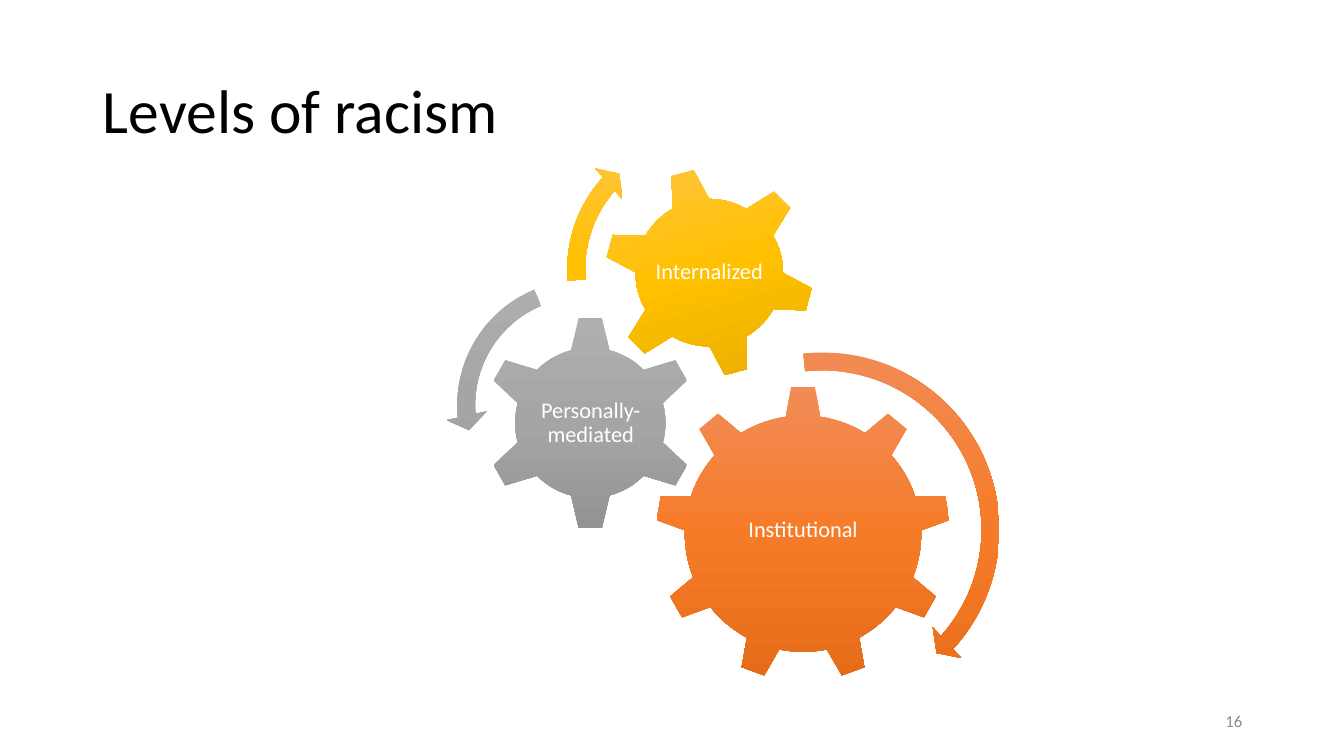
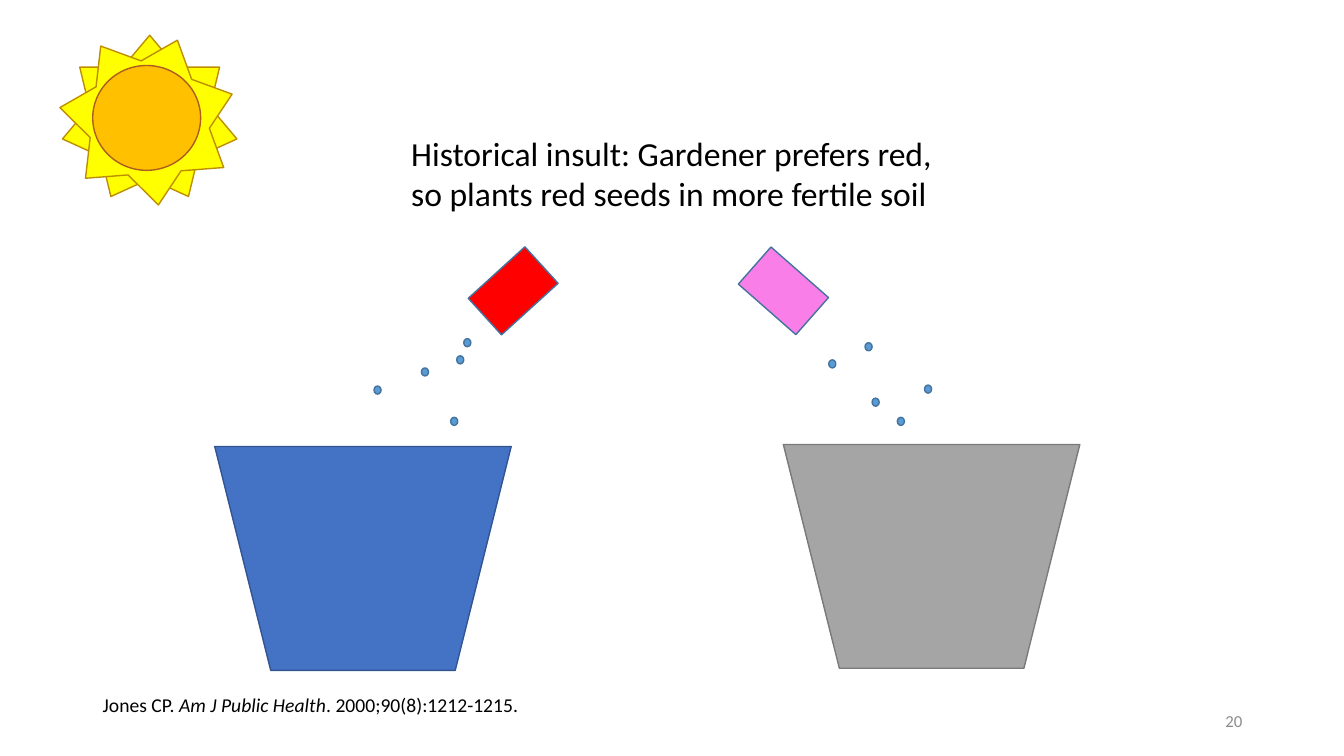
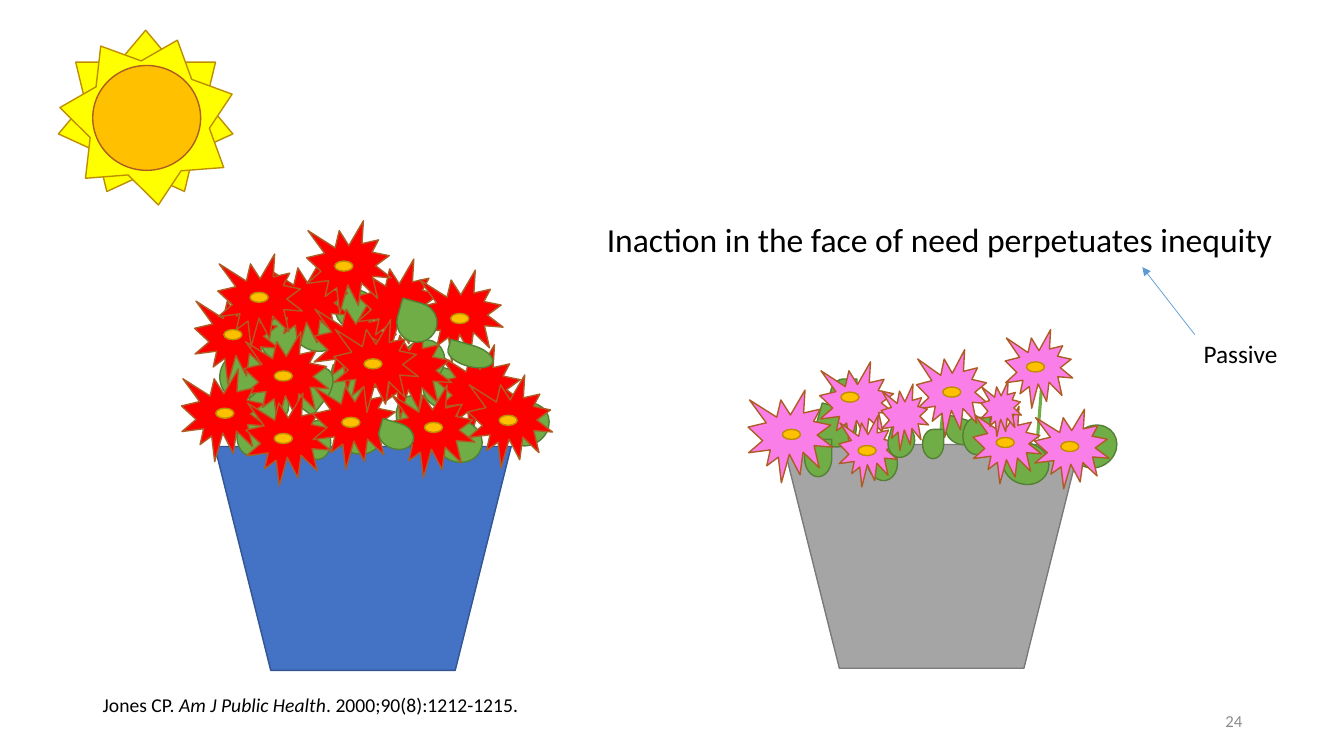
from copy import deepcopy

from pptx import Presentation
from pptx.dml.color import RGBColor
from pptx.enum.shapes import MSO_CONNECTOR, MSO_SHAPE
from pptx.enum.text import MSO_ANCHOR, PP_ALIGN
from pptx.oxml.ns import qn
from pptx.oxml.xmlchemy import OxmlElement
from pptx.util import Inches, Pt

FONT = "Calibri"
BLACK, WHITE, MUTED = "000000", "FFFFFF", "8C8C8C"
RED, PINK = "FF0000", "FA7EE8"
GREEN, GOLD, YELLOW, SKY = "70AD47", "FFC000", "FFFF00", "5B9BD5"
RUST, OCHRE, MOSS, STEEL = "AF5C24", "BD8E00", "538035", "43739E"
ORANGE_FADE = ("F18C57", "F67B28", "E56C19")
GREY_FADE = ("AFAFAF", "A5A5A5", "939393")
GOLD_FADE = ("FFC64B", "FFC000", "E3AB00")

TITLE_ONLY, BLANK = 5, 6
INSETS = (0.1, 0.05, 0.1, 0.05)
TIGHT = (0.02,) * 4


def rgb(code):
    return RGBColor.from_string(code)


def box(at):
    return [Inches(v) for v in at]


def write(frame, lines, size, color=BLACK, align=PP_ALIGN.LEFT,
          anchor=MSO_ANCHOR.TOP, wrap=True, space=1.0, insets=INSETS):
    """Fill a frame; each line is a list of (text, italic) runs."""
    frame.word_wrap = wrap
    frame.vertical_anchor = anchor
    (frame.margin_left, frame.margin_top,
     frame.margin_right, frame.margin_bottom) = box(insets)
    for i, runs in enumerate(lines):
        para = frame.add_paragraph() if i else frame.paragraphs[0]
        para.alignment = align
        para.line_spacing = space
        for text, italic in runs:
            run = para.add_run()
            run.text = text
            font = run.font
            font.name, font.size, font.italic = FONT, Pt(size), italic
            font.color.rgb = rgb(color)


def plain(*texts):
    return [[(text, False)] for text in texts]


def label(slide, at, lines, size, **style):
    write(slide.shapes.add_textbox(*box(at)).text_frame, lines, size, **style)


def draw(slide, kind, at, fill, line, turn=0):
    shape = slide.shapes.add_shape(kind, *box(at))
    shape.shadow.inherit = False
    shape.rotation = turn
    shape.fill.solid()
    shape.fill.fore_color.rgb = rgb(fill)
    shape.line.color.rgb = rgb(line)
    shape.line.width = Pt(1)
    return shape


def draw_fade(slide, kind, at, fade, turn=0, adjust=()):
    """Draw a borderless shape that fades downwards through three colours."""
    shape = slide.shapes.add_shape(kind, *box(at))
    shape.shadow.inherit = False
    shape.rotation = turn
    shape.line.fill.background()
    shape.fill.gradient()
    shape.fill.gradient_angle = 270
    stops = shape._element.spPr.find(".//" + qn("a:gsLst"))
    stops.append(deepcopy(stops[0]))
    for i, stop in enumerate(shape.fill.gradient_stops):
        stop.position = i / 2
        stop.color.rgb = rgb(fade[i])
    for i, value in enumerate(adjust):
        shape.adjustments[i] = value


def link(slide, start, end, color, width, arrow=False):
    line = slide.shapes.add_connector(
        MSO_CONNECTOR.STRAIGHT, *box(start), *box(end))
    line.line.color.rgb = rgb(color)
    line.line.width = Pt(width)
    if arrow:
        tip = OxmlElement("a:tailEnd")
        tip.set("type", "triangle")
        line.line._get_or_add_ln().append(tip)
    line._element.spPr.append(OxmlElement("a:effectLst"))


def number(slide, value):
    label(slide, (9.42, 6.95, 3, 0.4), plain(value), 12, color=MUTED,
          align=PP_ALIGN.RIGHT, anchor=MSO_ANCHOR.MIDDLE)


def cite(slide):
    runs = [("Jones CP. ", False), ("Am J Public Health", True),
            (". 2000;90(8):1212-1215.", False)]
    label(slide, (0.92, 6.83, 4.36, 0.34), [runs], 14, wrap=False)


def sun(slide, left=0.62, top=0.35):
    """Draw the sun; left and top place its rear star."""
    star = MSO_SHAPE.STAR_7_POINT
    draw(slide, star, (left, top, 1.73, 1.6), YELLOW, OCHRE)
    draw(slide, star, (0.62, 0.35, 1.73, 1.6), YELLOW, OCHRE, 20.1)
    draw(slide, MSO_SHAPE.OVAL, (0.92, 0.65, 1.07, 1.04), GOLD, RUST)


def blue_pot(slide):
    draw(slide, MSO_SHAPE.TRAPEZOID, (2.13, 4.43, 2.94, 2.22),
         "4472C4", "325491", 180)


def grey_pot(slide):
    draw(slide, MSO_SHAPE.TRAPEZOID, (7.77, 4.41, 2.94, 2.22),
         "A5A5A5", "7A7A7A", 180)


def leaves(slide, *rows):
    """Draw leaves from rows of left, top, width, height, turn."""
    for *at, turn in rows:
        leaf = draw(slide, MSO_SHAPE.TEAR, at, GREEN, MOSS, turn)
    return leaf


def blooms(slide, color, *rows):
    """Draw petals from rows of left, top and, if not usual, width, height."""
    for left, top, *size in rows:
        at = (left, top, *(size or (0.84, 0.92)))
        draw(slide, MSO_SHAPE.EXPLOSION1, at, color, RUST)


def dots(slide, size, fill, line, *spots):
    for spot in spots:
        draw(slide, MSO_SHAPE.OVAL, spot + size, fill, line)


def eyes(slide, *spots):
    dots(slide, (0.18, 0.1), GOLD, OCHRE, *spots)


def red_plant(slide):
    leaves(slide,
           (4.2, 3.65, 0.39, 0.4, 285.8), (3.25, 3.66, 0.39, 0.4, 285.8),
           (2.47, 3.82, 0.39, 0.4, 285.8), (2.98, 3.12, 0.3, 0.42, 285.8),
           (3.33, 2.87, 0.39, 0.4, 285.8), (2.59, 3.18, 0.39, 0.4, 285.8))
    blooms(slide, RED, (2.63, 2.56), (3.11, 2.97), (4.34, 3.42))
    blue_pot(slide)
    blooms(slide, RED, (3.54, 2.57))
    leaves(slide,
           (2.61, 3.54, 0.27, 0.37, 0), (3.93, 3.93, 0.27, 0.37, 0),
           (2.35, 4.15, 0.27, 0.37, 0), (3.99, 3.36, 0.41, 0.46, 218),
           (5.02, 3.98, 0.41, 0.46, 235.7))
    mirrored = leaves(slide, (2.96, 3.62, 0.31, 0.46, 218))
    mirrored._element.spPr.find(qn("a:xfrm")).set("flipH", "1")
    leaves(slide,
           (3.36, 4.07, 0.41, 0.46, 281.8), (2.18, 3.51, 0.41, 0.46, 0),
           (2.98, 4.18, 0.3, 0.38, 348.9), (4.35, 4.15, 0.41, 0.46, 285.8))
    blooms(slide, RED,
           (1.93, 2.89), (2.42, 3.29), (3.64, 3.23), (1.8, 3.66),
           (4.64, 3.72), (2.44, 3.9), (3.1, 3.74), (3.87, 3.82),
           (3.31, 3.17), (2.16, 2.52), (3.04, 2.19), (4.15, 2.68))
    leaves(slide,
           (3.8, 4.15, 0.26, 0.35, 285.8), (4.56, 3.3, 0.21, 0.46, 285.8),
           (3.94, 3, 0.39, 0.4, 285.8))
    eyes(slide,
         (2.48, 2.9), (3.32, 2.59), (2.22, 3.27), (2.14, 4.05),
         (2.72, 4.3), (3.39, 4.14), (2.72, 3.68), (4.47, 3.11),
         (3.61, 3.56), (4.21, 4.19), (4.95, 4.12))


def pink_plant(slide):
    link(slide, (9.35, 4.1), (9.3, 4.6), GREEN, 2.25)
    link(slide, (10.33, 3.85), (10.29, 4.35), GREEN, 2.25)
    grey_pot(slide)
    leaves(slide,
           (9.42, 4.12, 0.25, 0.33, 285.8), (8.1, 4.04, 0.39, 0.4, 285.8),
           (8.23, 3.76, 0.27, 0.37, 0), (9.55, 4.14, 0.27, 0.37, 0),
           (7.98, 4.36, 0.27, 0.37, 0), (10.65, 4.2, 0.41, 0.46, 235.7),
           (8.6, 4.39, 0.3, 0.38, 348.9), (9.97, 4.37, 0.41, 0.46, 285.8))
    blooms(slide, PINK,
           (8.13, 3.59, 0.75, 0.84), (7.42, 3.87), (10.26, 4.06, 0.74, 0.79),
           (8.32, 4.12, 0.58, 0.71), (9.65, 4.03, 0.68, 0.77),
           (9.09, 3.47, 0.71, 0.87), (9.97, 3.27, 0.67, 0.78))
    eyes(slide,
         (7.76, 4.26), (8.51, 4.42), (8.34, 3.89), (10.18, 3.59),
         (9.35, 3.84), (9.88, 4.34), (10.52, 4.38))
    leaves(slide, (8.78, 4.25, 0.32, 0.26, 285.8))
    blooms(slide, PINK, (8.74, 3.81, 0.47, 0.66), (9.73, 3.78, 0.4, 0.55))
    leaves(slide, (9.15, 4.26, 0.21, 0.29, 0))


def gear(slide, kind, at, fade, text, text_at, turn=0):
    draw_fade(slide, kind, at, fade, turn)
    label(slide, text_at, plain(text), 16, color=WHITE, space=0.9,
          align=PP_ALIGN.CENTER, anchor=MSO_ANCHOR.MIDDLE, insets=TIGHT)


def levels(deck):
    slide = deck.slides.add_slide(deck.slide_layouts[TITLE_ONLY])
    title = slide.shapes.title
    title.left, title.top, title.width, title.height = box(
        (0.92, 0.4, 11.5, 1.45))
    write(title.text_frame, plain("Levels of racism"), 44, space=0.9,
          anchor=MSO_ANCHOR.MIDDLE)
    gear(slide, MSO_SHAPE.GEAR_9, (6.5, 3.83, 2.93, 2.93), ORANGE_FADE,
         "Institutional", (7.09, 4.51, 1.75, 1.51))
    gear(slide, MSO_SHAPE.GEAR_6, (4.79, 3.13, 2.13, 2.13), GREY_FADE,
         "Personally-mediated", (5.33, 3.67, 1.06, 1.05))
    gear(slide, MSO_SHAPE.GEAR_6, (5.99, 1.66, 2.09, 2.09), GOLD_FADE,
         "Internalized", (6.45, 2.12, 1.17, 1.17), 345)
    right, left = MSO_SHAPE.CIRCULAR_ARROW, MSO_SHAPE.LEFT_CIRCULAR_ARROW
    draw_fade(slide, right, (6.28, 3.38, 3.75, 3.75), ORANGE_FADE,
              adjust=(0.047, 2.99, 25.302, 158.313, 0.055))
    draw_fade(slide, left, (4.42, 2.66, 2.72, 2.72), GREY_FADE,
              adjust=(0.065, 4.3, 104.891, 148.378, 0.075))
    draw_fade(slide, right, (5.51, 1.2, 2.94, 2.94), GOLD_FADE,
              adjust=(0.06, 3.941, 133.138, 105.082, 0.07))
    number(slide, "16")


def sowing(deck):
    slide = deck.slides.add_slide(deck.slide_layouts[BLANK])
    blue_pot(slide)
    grey_pot(slide)
    for left, color, turn in ((4.71, RED, 317.7), (7.39, PINK, 221.3)):
        draw(slide, MSO_SHAPE.RECTANGLE, (left, 2.64, 0.76, 0.49),
             color, STEEL, turn)
    dots(slide, (0.07, 0.08), SKY, STEEL,
         (4.47, 4.14), (3.71, 3.83), (4.18, 3.65), (4.53, 3.53), (4.6, 3.36),
         (8.58, 3.4), (8.65, 3.95), (8.22, 3.57), (9.17, 3.82), (8.9, 4.14))
    label(slide, (3.98, 1.27, 5.57, 0.91),
          plain("Historical insult: Gardener prefers red,",
                "so plants red seeds in more fertile soil"), 24, wrap=False)
    sun(slide)
    number(slide, "20")
    cite(slide)


def bloomed(deck):
    slide = deck.slides.add_slide(deck.slide_layouts[BLANK])
    red_plant(slide)
    pink_plant(slide)
    label(slide, (5.92, 2.12, 6.87, 0.5),
          plain("Inaction in the face of need perpetuates inequity"), 24,
          wrap=False)
    label(slide, (11.84, 3.31, 0.94, 0.4), plain("Passive"), 18, wrap=False)
    link(slide, (11.85, 3.32), (11.33, 2.65), SKY, 0.5, arrow=True)
    sun(slide, 0.58, 0.3)
    number(slide, "24")
    cite(slide)


def main():
    deck = Presentation()
    deck.slide_width, deck.slide_height = Inches(13.33), Inches(7.5)
    levels(deck)
    sowing(deck)
    bloomed(deck)
    deck.save("out.pptx")


if __name__ == "__main__":
    main()
